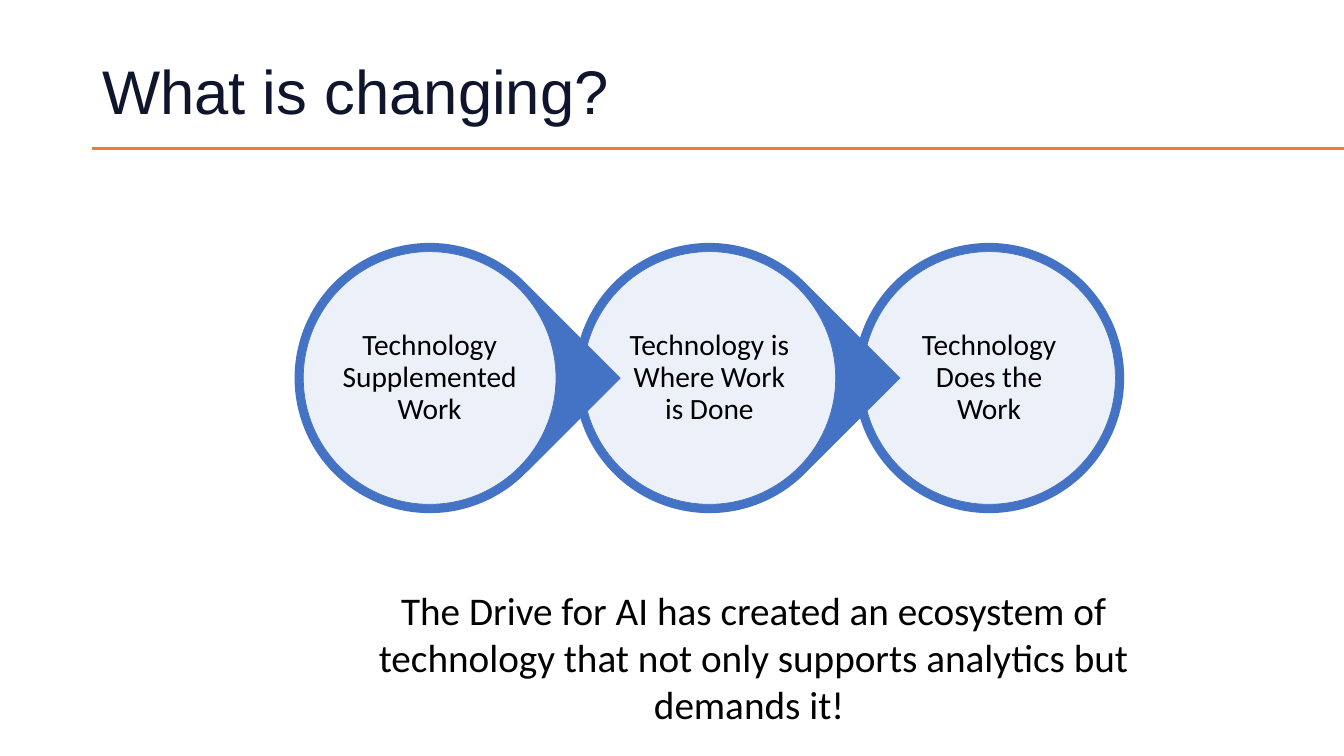
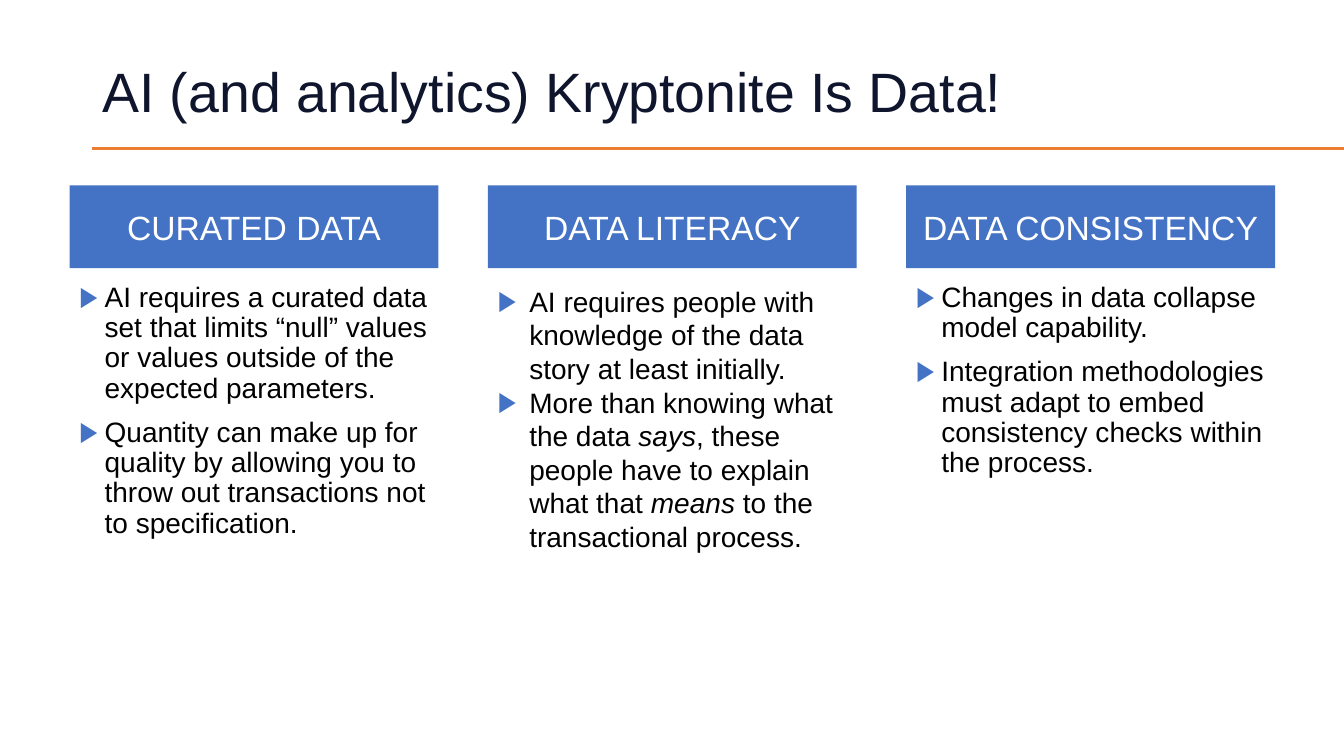
from dataclasses import dataclass

from lxml import etree
from pptx import Presentation
from pptx import slide as sl
from pptx import util as u
from pptx.dml.color import RGBColor
from pptx.enum import shapes, text
from pptx.oxml import ns

# Shared colours and fonts
NAVY = RGBColor(0x0F, 0x15, 0x2D)
BLUE = RGBColor(0x44, 0x72, 0xC4)
ORANGE = RGBColor(0xED, 0x7D, 0x31)
WHITE = RGBColor(0xFF, 0xFF, 0xFF)
BLACK = RGBColor(0, 0, 0)
SANS, BODY = "Arial", "Calibri"

SHAPE = shapes.MSO_SHAPE
ALIGN = text.PP_ALIGN
ANCHOR = text.MSO_ANCHOR


@dataclass(frozen=True)
class Box:
    left: float
    top: float
    width: float
    height: float

    def points(self) -> list[u.Pt]:
        return [u.Pt(v) for v in (self.left, self.top, self.width, self.height)]


@dataclass(frozen=True)
class Style:
    size: float
    font: str = SANS
    color: RGBColor = BLACK
    align: ALIGN = ALIGN.LEFT
    anchor: ANCHOR = ANCHOR.TOP
    spacing: float = 1


@dataclass(frozen=True)
class Column:
    head: str
    points: tuple[str, ...]  # asterisks enclose italics
    top: float = 198.72
    indent: float = 18
    spacing: float = 0.9
    before: float = 10


# Text styles
HEAD = Style(24, color=WHITE, align=ALIGN.CENTER, anchor=ANCHOR.MIDDLE)
LABEL = Style(21, BODY, align=ALIGN.CENTER, anchor=ANCHOR.MIDDLE, spacing=0.9)
NOTE = Style(28, BODY, align=ALIGN.CENTER)

# Slide content
STAGES = (
    "Technology Supplemented Work",
    "Technology is Where Work is Done",
    "Technology Does the Work",
)
CLAIM = ("The Drive for AI has created an ecosystem of technology "
         "that not only supports analytics but demands it! ")
COLUMNS = (
    Column("CURATED DATA", (
        "AI requires a curated data set that limits “null” values or values "
        "outside of the expected parameters.",
        "Quantity can make up for quality by allowing you to throw out "
        "transactions not to specification.",
    )),
    Column("DATA LITERACY", (
        "AI requires people with knowledge of the data story at least initially.",
        "More than knowing what the data *says*, these people have to explain "
        "what that *means* to the transactional process.",
    ), top=199.44, indent=22.5, spacing=1, before=0),
    Column("DATA CONSISTENCY", (
        "Changes in data collapse model capability.",
        "Integration methodologies must adapt to embed consistency checks "
        "within the process.",
    )),
)


def add_tag(parent: etree._Element, tag: str, **attrs: str) -> etree._Element:
    return etree.SubElement(parent, ns.qn(tag), **attrs)


def format_text(frame, style: Style) -> None:
    frame.word_wrap = True
    frame.vertical_anchor = style.anchor
    for para in frame.paragraphs:
        para.alignment = style.align
        para.line_spacing = style.spacing
        for run in para.runs:
            run.font.size = u.Pt(style.size)
            run.font.name = style.font
            run.font.color.rgb = style.color


def add_text(slide: sl.Slide, box: Box, words: str, style: Style):
    frame = slide.shapes.add_textbox(*box.points()).text_frame
    frame.text = words
    format_text(frame, style)
    return frame


def add_form(slide: sl.Slide, kind: SHAPE, box: Box, fill: RGBColor):
    form = slide.shapes.add_shape(kind, *box.points())
    form.shadow.inherit = False
    form.fill.solid()
    form.fill.fore_color.rgb = fill
    form.line.fill.background()
    return form


def add_slide(deck, title: str, size: float) -> sl.Slide:
    slide = deck.slides.add_slide(deck.slide_layouts[6])
    # Rule below the title
    rule = slide.shapes.add_connector(
        shapes.MSO_CONNECTOR.STRAIGHT,
        u.Pt(66), u.Pt(105.84), u.Pt(960), u.Pt(105.84))
    rule.line.color.rgb = ORANGE
    rule.line.width = u.Pt(2.25)
    add_tag(rule.element.spPr, "a:effectLst")
    # Title
    add_text(slide, Box(66, 28.8, 674.64, 77.04), title,
             Style(size, color=NAVY, anchor=ANCHOR.MIDDLE, spacing=0.9))
    return slide


def add_stage(slide: sl.Slide, index: int) -> None:
    def square(side: float) -> Box:
        middle = 306.9 + 199.8 * index
        return Box(middle - side / 2, 270 - side / 2, side, side)

    # Outer ring, pointed towards the next stage
    last = index == len(STAGES) - 1
    kind = SHAPE.OVAL if last else SHAPE.TEAR
    ring = add_form(slide, kind, square(193), BLUE)
    if not last:
        ring.rotation = 45
    # Translucent disc
    disc = add_form(slide, SHAPE.OVAL, square(180.5), WHITE)
    disc.line.color.rgb = BLUE
    disc.line.width = u.Pt(0.5)
    color = disc.element.spPr.find(ns.qn("a:solidFill"))[0]
    add_tag(color, "a:alpha", val="90000")
    # Label
    frame = add_text(slide, square(128.9), STAGES[index], LABEL)
    frame.margin_left = frame.margin_right = u.Pt(2)
    frame.margin_top = frame.margin_bottom = u.Pt(2)


def add_bullet(para, indent: float) -> None:
    props = para._p.get_or_add_pPr()
    props.set("marL", str(u.Pt(indent)))
    props.set("indent", str(-u.Pt(indent)))
    add_tag(add_tag(props, "a:buClr"), "a:srgbClr", val=str(BLUE))
    add_tag(props, "a:buFont", typeface=SANS)
    add_tag(props, "a:buChar", char="▶")


def add_column(slide: sl.Slide, index: int, col: Column) -> None:
    left, width = 49.68 + 298.8 * index, 263.52
    # Heading band
    band = add_form(slide, SHAPE.RECTANGLE, Box(left, 132.48, width, 59.04), BLUE)
    band.text_frame.text = col.head
    format_text(band.text_frame, HEAD)
    # Bullet list
    body = slide.shapes.add_textbox(*Box(left, col.top, width, 287.28).points())
    frame = body.text_frame
    for row, point in enumerate(col.points):
        para = frame.add_paragraph() if row else frame.paragraphs[0]
        add_bullet(para, col.indent)
        if row:
            para.space_before = u.Pt(col.before)
        for part, words in enumerate(point.split("*")):
            run = para.add_run()
            run.text = words
            run.font.italic = part % 2 == 1
    format_text(frame, Style(20, spacing=col.spacing))


def main() -> None:
    deck = Presentation()
    deck.slide_width, deck.slide_height = u.Pt(960), u.Pt(540)

    # Stages, drawn from the right so that each point overlaps the next ring
    change = add_slide(deck, "What is changing?", 44)
    for index in reversed(range(len(STAGES))):
        add_stage(change, index)
    add_text(change, Box(218.16, 415.44, 640.08, 108.72), CLAIM, NOTE)

    # Three columns
    data = add_slide(deck, "AI (and analytics) Kryptonite Is Data!", 39.6)
    for index, col in enumerate(COLUMNS):
        add_column(data, index, col)

    deck.save("out.pptx")


if __name__ == "__main__":
    main()
